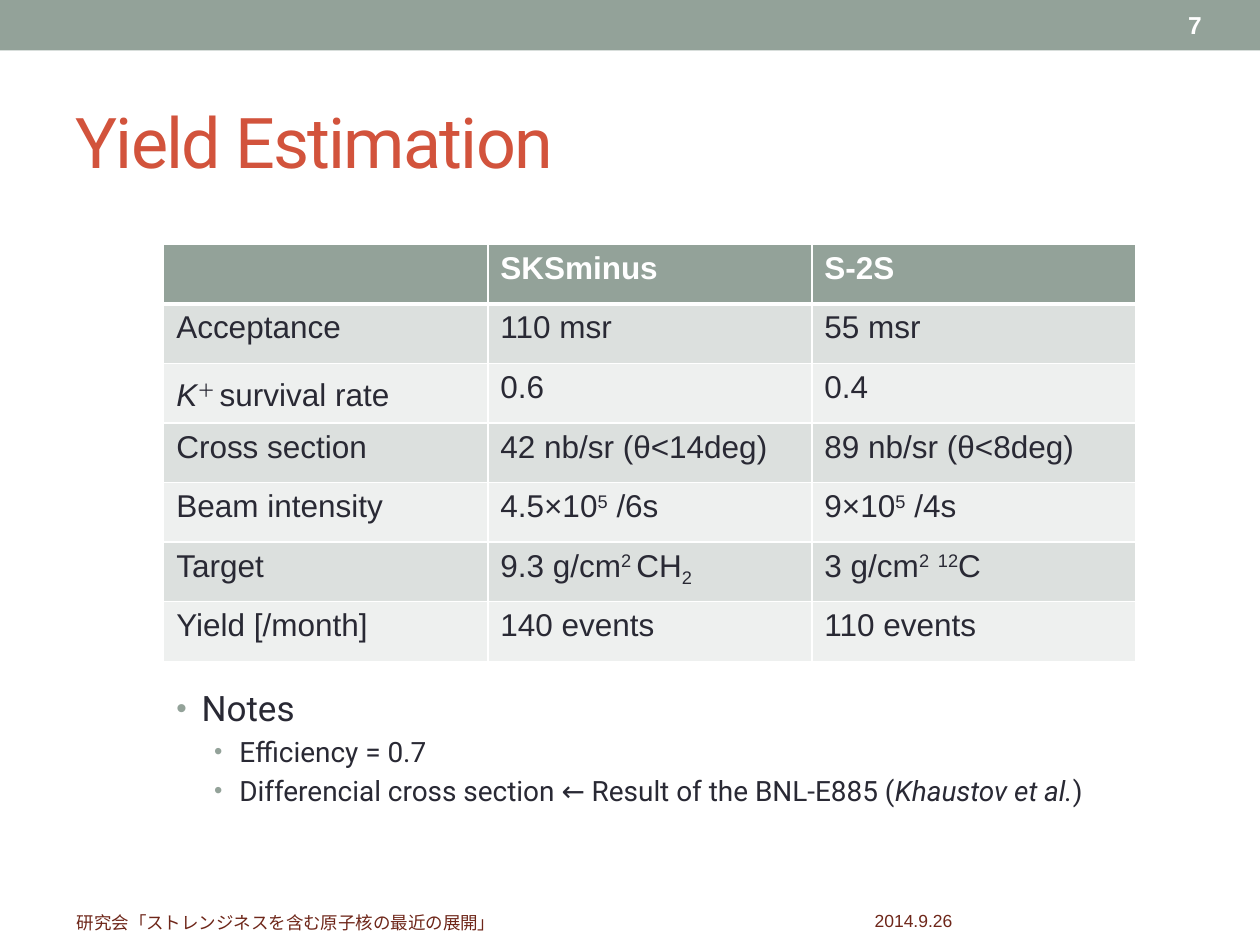
from lxml.etree import SubElement
from pptx import Presentation
from pptx.dml.color import RGBColor
from pptx.enum.shapes import MSO_SHAPE
from pptx.enum.text import MSO_ANCHOR, MSO_AUTO_SIZE, PP_ALIGN
from pptx.oxml.ns import qn
from pptx.util import Cm, Pt

SAGE = RGBColor(0x93, 0xA2, 0x99)
BAND_DARK = RGBColor(0xDC, 0xE0, 0xDE)
BAND_LIGHT = RGBColor(0xEE, 0xF0, 0xEF)
WHITE = RGBColor(0xFF, 0xFF, 0xFF)
INK = RGBColor(0x29, 0x29, 0x34)
RED = RGBColor(0xD2, 0x53, 0x3C)
BROWN = RGBColor(0x6E, 0x26, 0x19)

# Content: a text is a string or a list of strings and (string, format) pairs
SUPER = {"baseline": 30}
SUB = {"baseline": -25}
ITALIC = {"italic": True}

TITLE = "Yield Estimation"
ROWS = [
    ["", "SKSminus", "S-2S"],
    ["Acceptance", "110 msr", "55 msr"],
    [[("K", ITALIC), ("＋ ", SUPER), "survival rate"], "0.6", "0.4"],
    ["Cross section", "42 nb/sr (θ<14deg)", "89 nb/sr (θ<8deg)"],
    ["Beam intensity", ["4.5×10", ("5", SUPER), " /6s"], ["9×10", ("5", SUPER), " /4s"]],
    ["Target", ["9.3 g/cm", ("2 ", SUPER), "CH", ("2", SUB)],
     ["3 g/cm", ("2", SUPER), " ", ("12", SUPER), "C"]],
    ["Yield [/month]", "140 events", "110 events"],
]
NOTES = [
    (0, "Notes"),
    (1, "Efficiency = 0.7"),
    (1, ["Differencial cross section ← Result of the BNL-E885 (",
         ("Khaustov et al.", ITALIC), ")"]),
]
NOTE_LEVELS = [{"size": 20, "indent": 0.51}, {"size": 16, "indent": 1.27}]
# text, left, top, width, format
LABELS = [
    ("7", 23.7, 0.05, 1.65, {"size": 14, "color": WHITE, "bold": True}),
    ("研究会「ストレンジネスを含む原子核の最近の展開」", 0.05, 18.14, 11.43,
     {"size": 10, "color": BROWN, "align": PP_ALIGN.CENTER}),
    ("2014.9.26", 12.7, 18.11, 11.43,
     {"size": 10, "color": BROWN, "align": PP_ALIGN.CENTER}),
]


def write(para, text, size, color=INK, font="Arial", bold=False, align=PP_ALIGN.LEFT, spacing=None):
    para.alignment = align
    for piece in [text] if isinstance(text, str) else text:
        words, extra = (piece, {}) if isinstance(piece, str) else piece
        span = para.add_run()
        span.text = words
        span.font.name = font
        span.font.size = Pt(size)
        span.font.bold = bold
        span.font.italic = extra.get("italic", False)
        span.font.color.rgb = color
        properties = span._r.get_or_add_rPr()
        if "baseline" in extra:
            properties.set("baseline", str(extra["baseline"] * 1000))
        if spacing is not None:
            properties.set("spc", str(spacing * 100))


def place(shape, left, top, width, height):
    shape.left, shape.top = Cm(left), Cm(top)
    shape.width, shape.height = Cm(width), Cm(height)


def add_bullet(para, indent):
    properties = para._p.get_or_add_pPr()
    properties.set("marL", str(Cm(indent)))
    properties.set("indent", str(-Cm(0.51)))
    color = SubElement(properties, qn("a:buClr"))
    SubElement(color, qn("a:srgbClr"), val=str(SAGE))
    SubElement(properties, qn("a:buSzPct"), val="85000")
    SubElement(properties, qn("a:buFont"), typeface="Arial")
    SubElement(properties, qn("a:buChar"), char="•")


def add_borders(cell, widths):
    properties = cell._tc.get_or_add_tcPr()
    for side, width in widths.items():
        line = SubElement(properties, qn(f"a:ln{side}"), w=str(Pt(width)))
        fill = SubElement(line, qn("a:solidFill"))
        SubElement(fill, qn("a:srgbClr"), val=str(WHITE))


deck = Presentation()
deck.slide_width, deck.slide_height = Cm(25.4), Cm(19.05)
page = deck.slides.add_slide(deck.slide_layouts[1])
title, body = page.placeholders

# Top band
band = page.shapes.add_shape(MSO_SHAPE.RECTANGLE, 0, 0, deck.slide_width, Cm(1.02))
band.shadow.inherit = False
band.fill.solid()
band.fill.fore_color.rgb = SAGE
band.line.fill.background()

# Title
place(title, 1.27, 1.47, 22.86, 2.74)
title.text_frame.vertical_anchor = MSO_ANCHOR.MIDDLE
write(title.text_frame.paragraphs[0], TITLE, 40, color=RED, font="Roboto", spacing=-1)

# Page number, meeting and date
for text, left, top, width, style in LABELS:
    box = page.shapes.add_textbox(Cm(left), Cm(top), Cm(width), Cm(0.91))
    box.text_frame.word_wrap = True
    box.text_frame.vertical_anchor = MSO_ANCHOR.MIDDLE
    write(box.text_frame.paragraphs[0], text, **style)

# Table with banded rows
table = page.shapes.add_table(len(ROWS), len(ROWS[0]), Cm(3.3), Cm(4.93), Cm(19.6), Cm(8.4)).table
for r, row in enumerate(ROWS):
    header = r == 0
    for c, text in enumerate(row):
        cell = table.cell(r, c)
        add_borders(cell, {"L": 1, "R": 1, "T": 3 if r == 1 else 1, "B": 3 if header else 1})
        cell.fill.solid()
        cell.fill.fore_color.rgb = SAGE if header else BAND_DARK if r % 2 else BAND_LIGHT
        if text:
            write(cell.text_frame.paragraphs[0], text, 18,
                  color=WHITE if header else INK, bold=header)

# Notes
place(body, 3.3, 13.72, 20.42, 3.2)
frame = body.text_frame
frame.auto_size = MSO_AUTO_SIZE.NONE
for number, (level, text) in enumerate(NOTES):
    para = frame.add_paragraph() if number else frame.paragraphs[0]
    para.level = level
    if number == 0:
        para.space_before = Pt(0)
    add_bullet(para, NOTE_LEVELS[level]["indent"])
    write(para, text, NOTE_LEVELS[level]["size"], font="Roboto")

deck.save("out.pptx")
